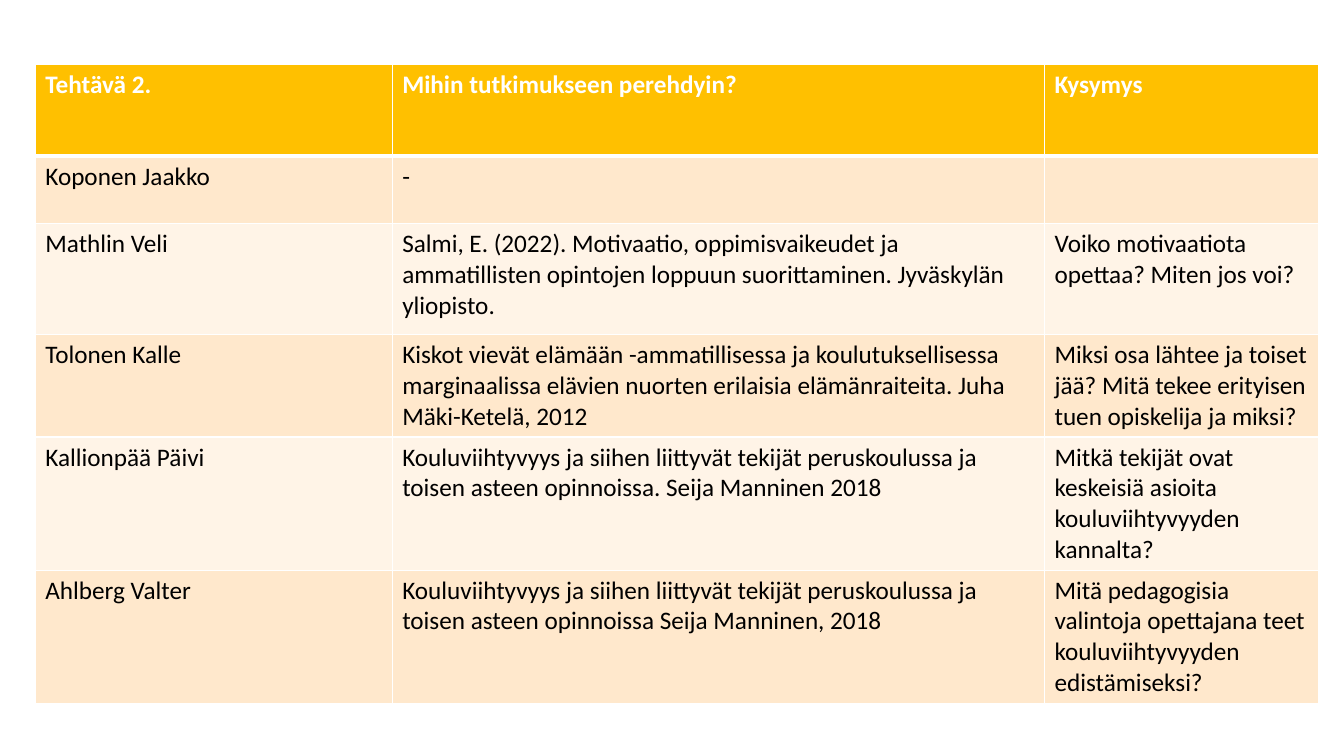
from lxml.etree import SubElement
from pptx import Presentation
from pptx.dml.color import RGBColor
from pptx.oxml import parse_xml
from pptx.oxml.ns import nsdecls
from pptx.util import Inches, Pt

# Content
HEADER = ("Tehtävä 2.", "Mihin tutkimukseen perehdyin?", "Kysymys")
ENTRIES = [
    ("Koponen Jaakko", "-", ""),
    ("Mathlin Veli",
     "Salmi, E. (2022). Motivaatio, oppimisvaikeudet ja ammatillisten opintojen "
     "loppuun suorittaminen. Jyväskylän yliopisto.",
     "Voiko motivaatiota opettaa? Miten jos voi?"),
    ("Tolonen Kalle",
     "Kiskot vievät elämään -ammatillisessa ja koulutuksellisessa marginaalissa "
     "elävien nuorten erilaisia elämänraiteita. Juha Mäki-Ketelä, 2012",
     "Miksi osa lähtee ja toiset jää? Mitä tekee erityisen tuen opiskelija ja miksi?"),
    ("Kallionpää Päivi",
     "Kouluviihtyvyys ja siihen liittyvät tekijät peruskoulussa ja toisen asteen "
     "opinnoissa. Seija Manninen 2018",
     "Mitkä tekijät ovat keskeisiä asioita kouluviihtyvyyden kannalta?"),
    ("Ahlberg Valter",
     "Kouluviihtyvyys ja siihen liittyvät tekijät peruskoulussa ja toisen asteen "
     "opinnoissa Seija Manninen, 2018",
     "Mitä pedagogisia valintoja opettajana teet kouluviihtyvyyden edistämiseksi?"),
]
ROWS = [HEADER] + ENTRIES

# Style and grid, in inches
COLORS = {"header": "FFC000", "odd": "FFE8CC", "even": "FFF4E7",
          "white": "FFFFFF", "text": "000000"}
LEFT, TOP = 0.35, 0.64
COLUMN_WIDTHS = (3.54, 6.47, 2.72)
ROW_HEIGHTS = (0.91, 0.67, 1.1, 0.67, 1.06, 1.06)
THIN, THICK = 1, 3


def set_borders(cell, row_index):
    """White rules, thicker between the header and the body."""
    widths = {"lnL": THIN, "lnR": THIN,
              "lnT": THICK if row_index == 1 else THIN,
              "lnB": THICK if row_index == 0 else THIN}
    properties = cell._tc.get_or_add_tcPr()
    for position, (side, width) in enumerate(widths.items()):
        line = parse_xml(f'<a:{side} {nsdecls("a")} w="{Pt(width)}"><a:solidFill>'
                         f'<a:srgbClr val="{COLORS["white"]}"/></a:solidFill></a:{side}>')
        properties.insert(position, line)


def fill_cell(cell, text, row_index):
    is_header = row_index == 0
    fill_name = "header" if is_header else ("odd" if row_index % 2 else "even")
    cell.fill.solid()
    cell.fill.fore_color.rgb = RGBColor.from_string(COLORS[fill_name])
    set_borders(cell, row_index)
    cell.text_frame.text = text
    para = cell.text_frame.paragraphs[0]
    para.font.size = Pt(18)
    for span in para.runs:
        span.font.name = "Calibri"
        span.font.size = Pt(18)
        span.font.bold = is_header
        span.font.color.rgb = RGBColor.from_string(COLORS["white" if is_header else "text"])


def main():
    deck = Presentation()
    deck.slide_width, deck.slide_height = Inches(13.33), Inches(7.5)
    page = deck.slides.add_slide(deck.slide_layouts[6])

    # Table of studies and questions
    table = page.shapes.add_table(
        len(ROWS), len(HEADER), Inches(LEFT), Inches(TOP),
        Inches(sum(COLUMN_WIDTHS)), Inches(sum(ROW_HEIGHTS))).table
    for column, width in zip(table.columns, COLUMN_WIDTHS):
        column.width = Inches(width)
    for row_index, (texts, height) in enumerate(zip(ROWS, ROW_HEIGHTS)):
        table.rows[row_index].height = Inches(height)
        for column_index, text in enumerate(texts):
            fill_cell(table.cell(row_index, column_index), text, row_index)

    deck.save("out.pptx")


if __name__ == "__main__":
    main()
